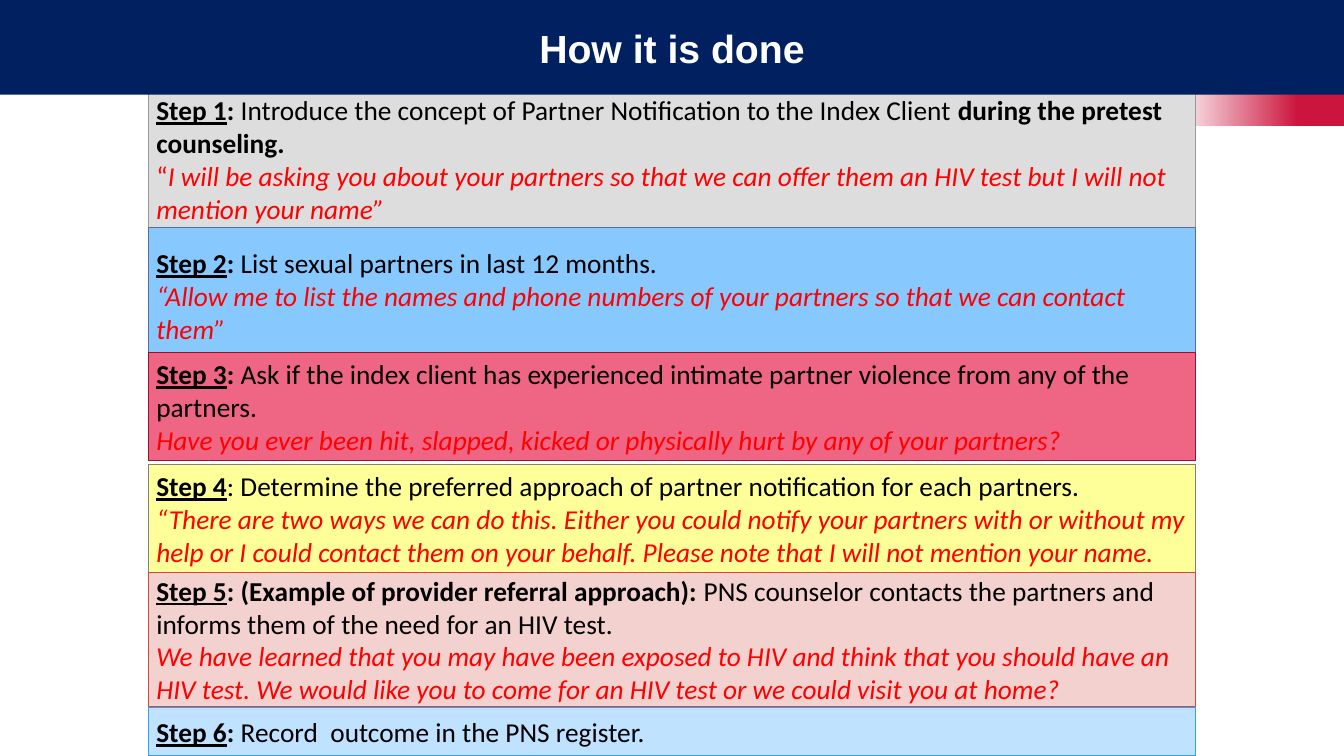
from lxml import etree
from pptx import Presentation
from pptx.dml.color import RGBColor
from pptx.enum.shapes import MSO_SHAPE
from pptx.enum.text import MSO_ANCHOR, MSO_AUTO_SIZE, PP_ALIGN
from pptx.oxml.ns import qn
from pptx.util import Inches, Pt

COLORS = {
    "navy": "002060", "white": "FFFFFF", "crimson": "CD163F",
    "black": "000000", "red": "FF0000",
}
STEP_LEFT, STEP_WIDTH = 1.47, 10.39

# Formats of the runs
LABEL = {"bold": True, "underline": True}
BOLD = {"bold": True}
PLAIN = {}
QUOTE = {"italic": True}

# top, height, fill, line, runs after the step label, runs of the spoken line
STEPS = [
    (0.88, 1.4, "DDDDDE", "98999D",
     [(": ", BOLD),
      ("Introduce the concept of Partner Notification to the Index Client ", PLAIN),
      ("during the pretest counseling.", BOLD)],
     [("“", PLAIN),
      ("I will be asking you about your partners so that we can offer them "
       "an HIV test but I will not mention your name”", QUOTE)]),
    (2.26, 1.35, "87C9FF", "596C9B",
     [(":", BOLD), (" List sexual partners in last 12 months.", PLAIN)],
     [("“Allow me to list the names and phone numbers of your partners "
       "so that we can contact them”", QUOTE)]),
    (3.5, 1.07, "EF6684", "9A112F",
     [(":", BOLD),
      (" Ask if the index client has experienced intimate partner violence "
       "from any of the partners.", PLAIN)],
     [("Have you ever been hit, slapped, kicked or physically hurt "
       "by any of your partners?", QUOTE)]),
    (4.61, 1.07, "FFFF99", "808080",
     [(": Determine the preferred approach of partner notification "
       "for each partners.", PLAIN)],
     [("“There are two ways we can do this. Either you could notify your "
       "partners with or without my help or I could contact them on your "
       "behalf. Please note that I will not mention your name.", QUOTE)]),
    (5.68, 1.33, "F3D1CF", "D1493D",
     [(": (Example of provider referral approach): ", BOLD),
      ("PNS counselor contacts the partners and informs them of the need "
       "for an HIV test.", PLAIN)],
     [("We have learned that you may have been exposed to HIV and think that "
       "you should have an HIV test. We would like you to come for an HIV "
       "test or we could visit you at home?", QUOTE)]),
    (7.02, 0.48, "BEE2FF", "2FA0FF",
     [(":", BOLD), (" Record  outcome in the PNS register.", PLAIN)], []),
]


def rgb(value):
    return RGBColor.from_string(value)


def set_fill(shape, color):
    shape.fill.solid()
    shape.fill.fore_color.rgb = rgb(color)


def set_frame(tf, side, edge):
    frame = {
        "word_wrap": True, "auto_size": MSO_AUTO_SIZE.NONE,
        "vertical_anchor": MSO_ANCHOR.MIDDLE,
        "margin_left": Inches(side), "margin_right": Inches(side),
        "margin_top": Inches(edge), "margin_bottom": Inches(edge),
    }
    for name, value in frame.items():
        setattr(tf, name, value)


def add_runs(p, runs, size, font, color):
    for text, style in runs:
        r = p.add_run()
        r.text = text
        base = {"name": font, "size": Pt(size), "bold": False}
        for name, value in {**base, **style}.items():
            setattr(r.font, name, value)
        r.font.color.rgb = rgb(color)


def add_rect(s, left, top, width, height):
    box = s.shapes.add_shape(MSO_SHAPE.RECTANGLE, Inches(left), Inches(top),
                             Inches(width), Inches(height))
    box.shadow.inherit = False
    return box


def add_corner_fade(s):
    """Crimson block at the top right that fades out to the left."""
    fade = add_rect(s, 11.55, 0, 1.78, 1.25)
    fade.line.fill.background()
    fade.fill.gradient()
    fade.fill.gradient_angle = 180
    stops = fade.fill.gradient_stops
    for stop, position in zip(stops, (0.26, 0.96)):
        stop.position = position
        stop.color.rgb = rgb(COLORS["crimson"])
    clear = list(fade.element.spPr.iter(qn("a:srgbClr")))[-1]
    etree.SubElement(clear, qn("a:alpha"), val="0")


def add_step(s, number, top, height, fill, line, action, spoken):
    box = add_rect(s, STEP_LEFT, top, STEP_WIDTH, height)
    set_fill(box, fill)
    box.line.color.rgb = rgb(line)
    box.line.width = Pt(1)
    tf = box.text_frame
    set_frame(tf, 0.08, 0.04)
    p = tf.paragraphs[0]
    p.alignment = PP_ALIGN.LEFT
    add_runs(p, [(f"Step {number}", LABEL)] + action, 19.5, "Calibri", COLORS["black"])
    if spoken:
        p = tf.add_paragraph()
        p.alignment = PP_ALIGN.LEFT
        add_runs(p, spoken, 19.5, "Calibri", COLORS["red"])


def place_title(s, prs, text):
    """Make the title a full-width bar in front of the steps."""
    title = s.shapes.title
    title.left, title.top = 0, 0
    title.width, title.height = prs.slide_width, Inches(0.94)
    set_fill(title, COLORS["navy"])
    set_frame(title.text_frame, 0.1, 0.05)
    p = title.text_frame.paragraphs[0]
    p.alignment = PP_ALIGN.CENTER
    add_runs(p, [(text, BOLD)], 28, "Arial", COLORS["white"])
    title.element.getparent().append(title.element)


def main():
    prs = Presentation()
    prs.slide_width, prs.slide_height = Inches(13.33), Inches(7.5)
    s = prs.slides.add_slide(prs.slide_layouts[5])
    add_corner_fade(s)
    for number, step in enumerate(STEPS, 1):
        add_step(s, number, *step)
    place_title(s, prs, "How it is done")
    prs.save("out.pptx")


if __name__ == "__main__":
    main()
